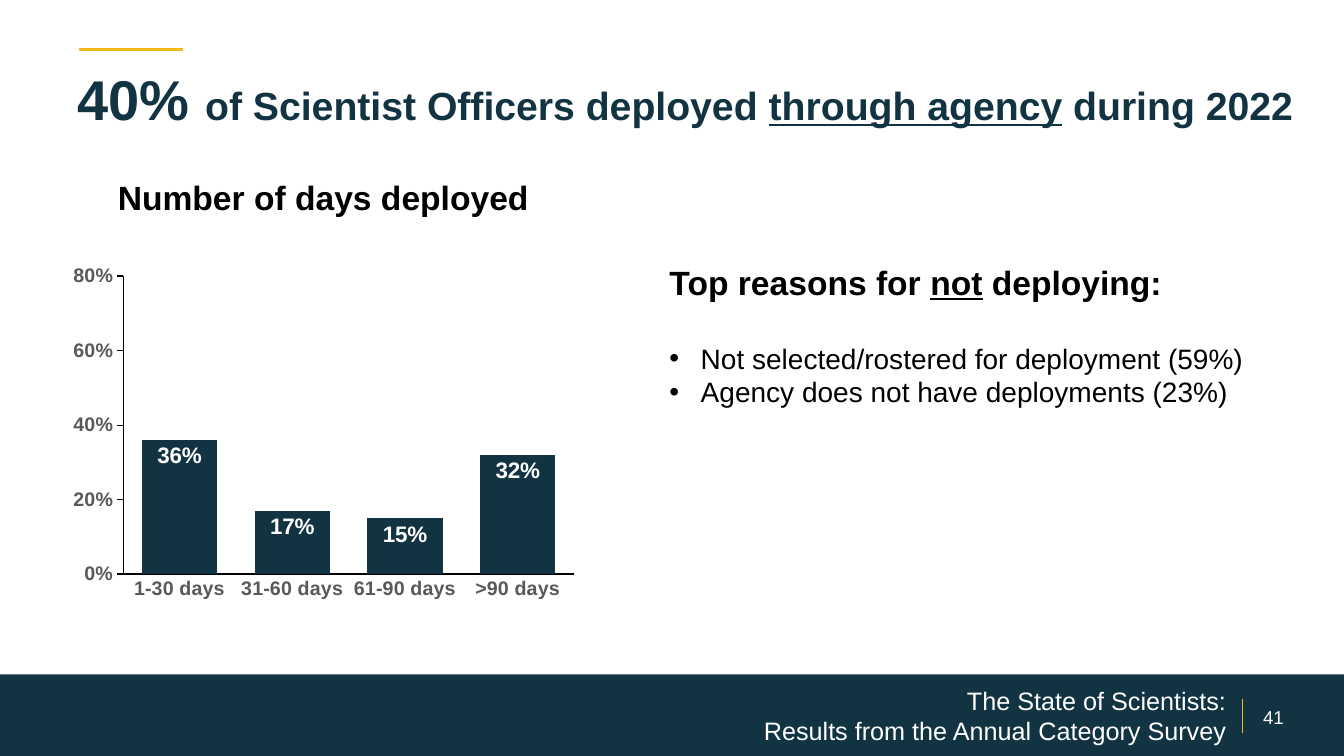
import pptx
import pptx.chart.data
import pptx.dml.color
import pptx.enum.chart
import pptx.enum.shapes
import pptx.enum.text
import pptx.oxml
import pptx.oxml.ns
import pptx.util

Inches = pptx.util.Inches
Pt = pptx.util.Pt
RGBColor = pptx.dml.color.RGBColor
Align = pptx.enum.text.PP_ALIGN
Anchor = pptx.enum.text.MSO_ANCHOR

NAVY = RGBColor(0x12, 0x33, 0x42)
GOLD = RGBColor(0xF4, 0xBA, 0x18)
GREY = RGBColor(0x59, 0x59, 0x59)
BLACK = RGBColor(0, 0, 0)
WHITE = RGBColor(255, 255, 255)


class SurveySlide:
    """Draws the elements of a survey slide in one shared style."""

    font_name = "Arial"

    def __init__(self, deck):
        self.page = deck.slides.add_slide(deck.slide_layouts[1])

    def style(self, font, size, color, bold=False, underline=None):
        font.name = self.font_name
        font.size = Pt(size)
        font.color.rgb = color
        font.bold = bold
        if underline is not None:
            font.underline = underline

    def add_text(self, para, text, **look):
        for number, line in enumerate(text.split("\n")):
            if number:
                para.add_line_break()
            span = para.add_run()
            span.text = line
            self.style(span.font, **look)

    def place(self, box, left, top, width, height):
        box.left, box.top = Inches(left), Inches(top)
        box.width, box.height = Inches(width), Inches(height)

    def prepare(self, frame, anchor):
        frame.word_wrap = True
        frame.auto_size = pptx.enum.text.MSO_AUTO_SIZE.NONE
        frame.vertical_anchor = anchor

    def bullet(self, para, mark=None):
        properties = para._p.get_or_add_pPr()
        hang = Inches(0.31) if mark else 0
        properties.set("marL", str(hang))
        properties.set("indent", str(-hang))
        tag = "a:buChar" if mark else "a:buNone"
        element = pptx.oxml.parse_xml(f"<{tag} {pptx.oxml.ns.nsdecls('a')}/>")
        if mark:
            element.set("char", mark)
        properties.append(element)

    def line(self, start, end, width):
        line = self.page.shapes.add_connector(
            pptx.enum.shapes.MSO_CONNECTOR.STRAIGHT,
            *map(Inches, start + end))
        line.line.color.rgb = GOLD
        line.line.width = Pt(width)
        line._element.spPr.append(
            pptx.oxml.parse_xml(f"<a:effectLst {pptx.oxml.ns.nsdecls('a')}/>"))

    def band(self, left, top, width, height):
        band = self.page.shapes.add_shape(
            pptx.enum.shapes.MSO_SHAPE.RECTANGLE,
            *map(Inches, (left, top, width, height)))
        band.shadow.inherit = False
        band.fill.solid()
        band.fill.fore_color.rgb = NAVY
        band.line.fill.background()

    def text(self, text, place, align=Align.LEFT, anchor=Anchor.TOP, **look):
        box = self.page.shapes.add_textbox(*map(Inches, place))
        self.prepare(box.text_frame, anchor)
        para = box.text_frame.paragraphs[0]
        para.alignment = align
        self.add_text(para, text, **look)

    def title(self, spans, place):
        box = self.page.shapes.title
        self.place(box, *place)
        self.prepare(box.text_frame, Anchor.TOP)
        box.text_frame.margin_top = Inches(0.11)
        para = box.text_frame.paragraphs[0]
        para.alignment = Align.LEFT
        for text, size, underline in spans:
            self.add_text(para, text, size=size, color=NAVY, bold=True,
                          underline=underline)

    def reasons(self, heading, items, place):
        box = self.page.placeholders[1]
        self.place(box, *place)
        frame = box.text_frame
        self.prepare(frame, Anchor.TOP)
        para = frame.paragraphs[0]
        para.space_before, para.space_after = Pt(0), Pt(27.6)
        self.bullet(para)
        for text, underline in heading:
            self.add_text(para, text, size=24, color=BLACK, bold=True,
                          underline=underline)
        for item in items:
            para = frame.add_paragraph()
            para.space_before = Pt(0)
            self.bullet(para, "•")
            self.add_text(para, item, size=20, color=BLACK)

    def columns(self, values, place, plot_area):
        data = pptx.chart.data.CategoryChartData(number_format="0%")
        data.categories = list(values)
        data.add_series("Series 1", list(values.values()))
        chart = self.page.shapes.add_chart(
            pptx.enum.chart.XL_CHART_TYPE.COLUMN_CLUSTERED,
            *map(Inches, place), data).chart
        self.style(chart.font, 10, BLACK)
        chart.has_legend = chart.has_title = False
        plot = chart.plots[0]
        plot.gap_width, plot.overlap = 50, -27
        plot.vary_by_categories = False
        series = plot.series[0]
        series.format.fill.solid()
        series.format.fill.fore_color.rgb = NAVY
        labels = series.data_labels
        labels.show_value = True
        labels.number_format, labels.number_format_is_linked = "0%", False
        labels.position = pptx.enum.chart.XL_LABEL_POSITION.INSIDE_END
        self.style(labels.font, 16, WHITE, bold=True)
        tick = pptx.enum.chart.XL_TICK_MARK
        for axis, mark in ((chart.category_axis, tick.NONE),
                           (chart.value_axis, tick.OUTSIDE)):
            axis.has_major_gridlines = False
            axis.major_tick_mark, axis.minor_tick_mark = mark, tick.NONE
            axis.format.line.color.rgb = BLACK
            axis.format.line.width = Pt(0.75)
            self.style(axis.tick_labels.font, 14, GREY, bold=True)
        axis.minimum_scale, axis.maximum_scale, axis.major_unit = 0, 0.8, 0.2
        axis.tick_labels.number_format = "0%"
        axis.tick_labels.number_format_is_linked = False
        self.plot_layout(chart, plot_area)

    def plot_layout(self, chart, plot_area):
        area = chart._chartSpace.chart.plotArea
        for old in area.findall(pptx.oxml.ns.qn("c:layout")):
            area.remove(old)
        sides = "".join(f'<c:{side} val="{value}"/>'
                        for side, value in zip("xywh", plot_area))
        area.insert(0, pptx.oxml.parse_xml(
            f"<c:layout {pptx.oxml.ns.nsdecls('c')}><c:manualLayout>"
            '<c:layoutTarget val="inner"/><c:xMode val="edge"/>'
            f'<c:yMode val="edge"/>{sides}</c:manualLayout></c:layout>'))


def main():
    deck = pptx.Presentation()
    deck.slide_width, deck.slide_height = Inches(13.33), Inches(7.5)
    slide = SurveySlide(deck)
    slide.line((0.78, 0.49), (1.82, 0.49), 2.5)
    slide.band(0, 6.69, 13.33, 0.81)
    slide.text("41", (12.24, 6.97, 0.78, 0.28), Align.CENTER, Anchor.MIDDLE,
               size=13.3, color=WHITE)
    slide.line((12.32, 6.93), (12.32, 7.27), 0.75)
    slide.title([("40% ", 40, False),
                 ("of Scientist Officers deployed ", 28, False),
                 ("through agency", 28, True),
                 (" during 2022", 28, False)], (0.67, 0.53, 12.6, 0.68))
    slide.columns({"1-30 days": 0.36, "31-60 days": 0.17,
                   "61-90 days": 0.15, ">90 days": 0.32},
                  (0.65, 2, 5.2, 5.28), (0.11, 0.14, 0.86, 0.56))
    slide.text("The State of Scientists:\n"
               "Results from the Annual Category Survey",
               (3.75, 6.93, 8.51, 0.33), Align.RIGHT, Anchor.MIDDLE,
               size=18, color=WHITE)
    slide.text("Number of days deployed", (1.07, 1.71, 4.36, 0.5),
               size=24, color=BLACK, bold=True)
    slide.reasons([("Top reasons for ", False), ("not", True),
                   (" deploying:", False)],
                  ["Not selected/rostered for deployment (59%)",
                   "Agency does not have deployments (23%)"],
                  (6.54, 2.55, 6.53, 1.92))
    deck.save("out.pptx")


if __name__ == "__main__":
    main()
